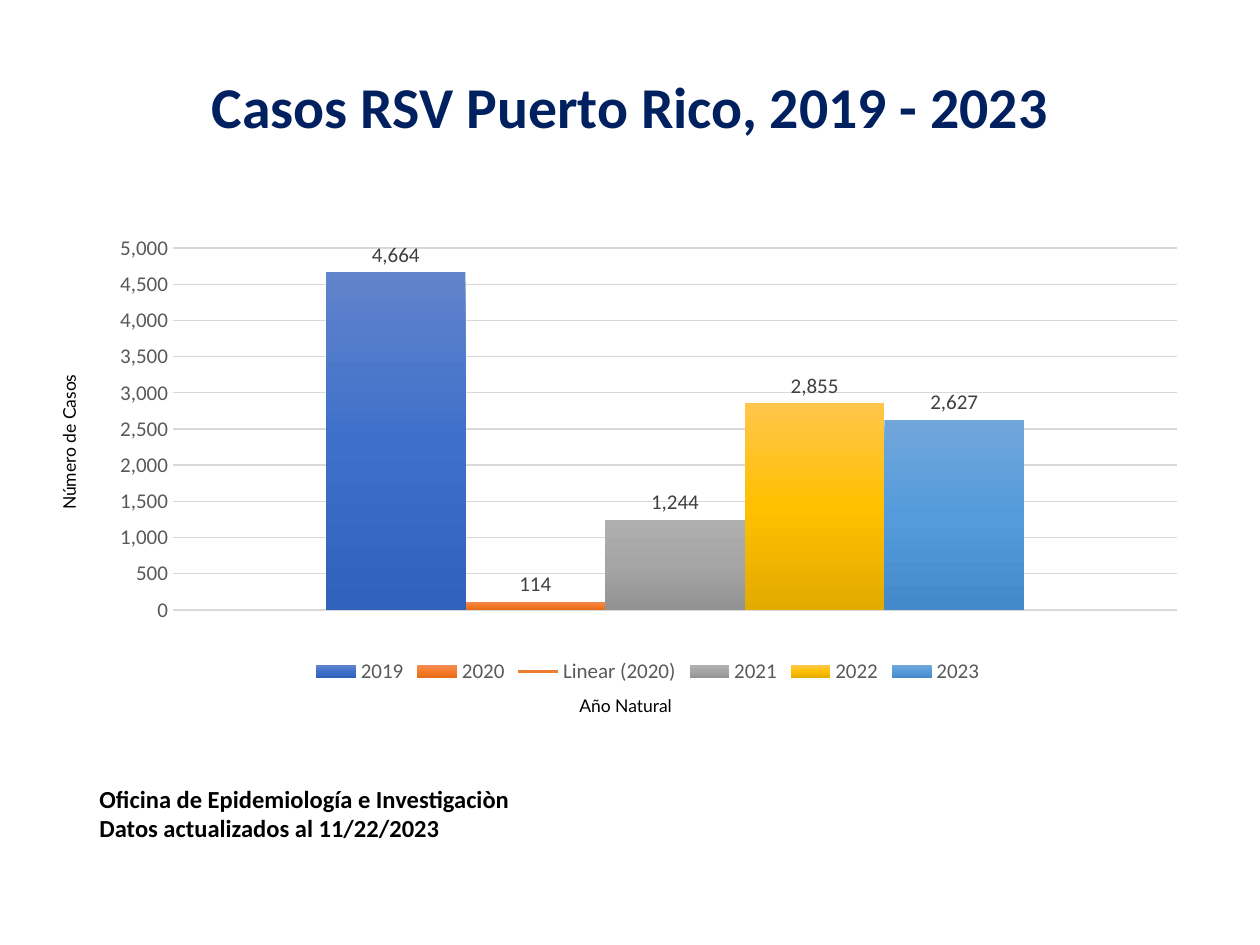
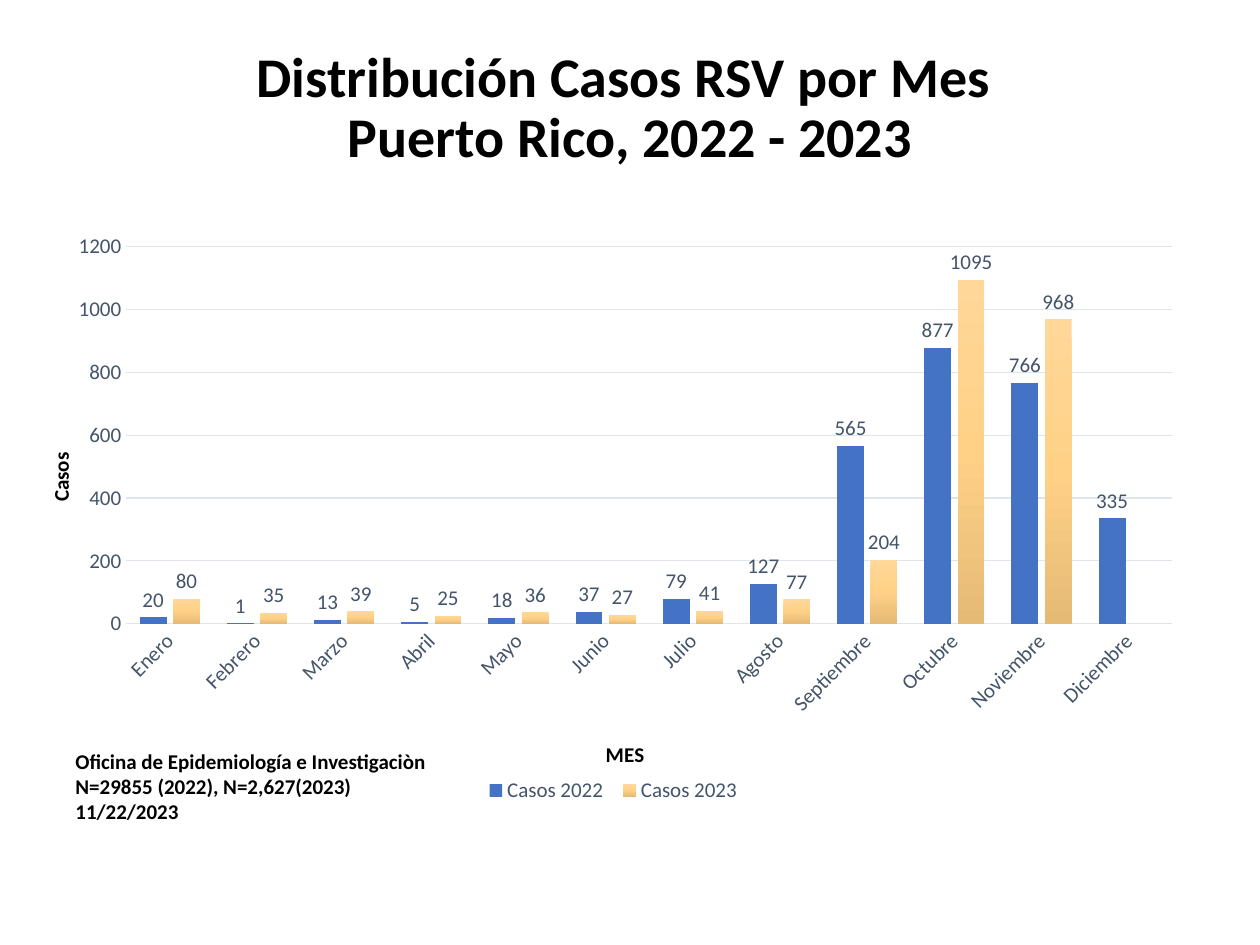
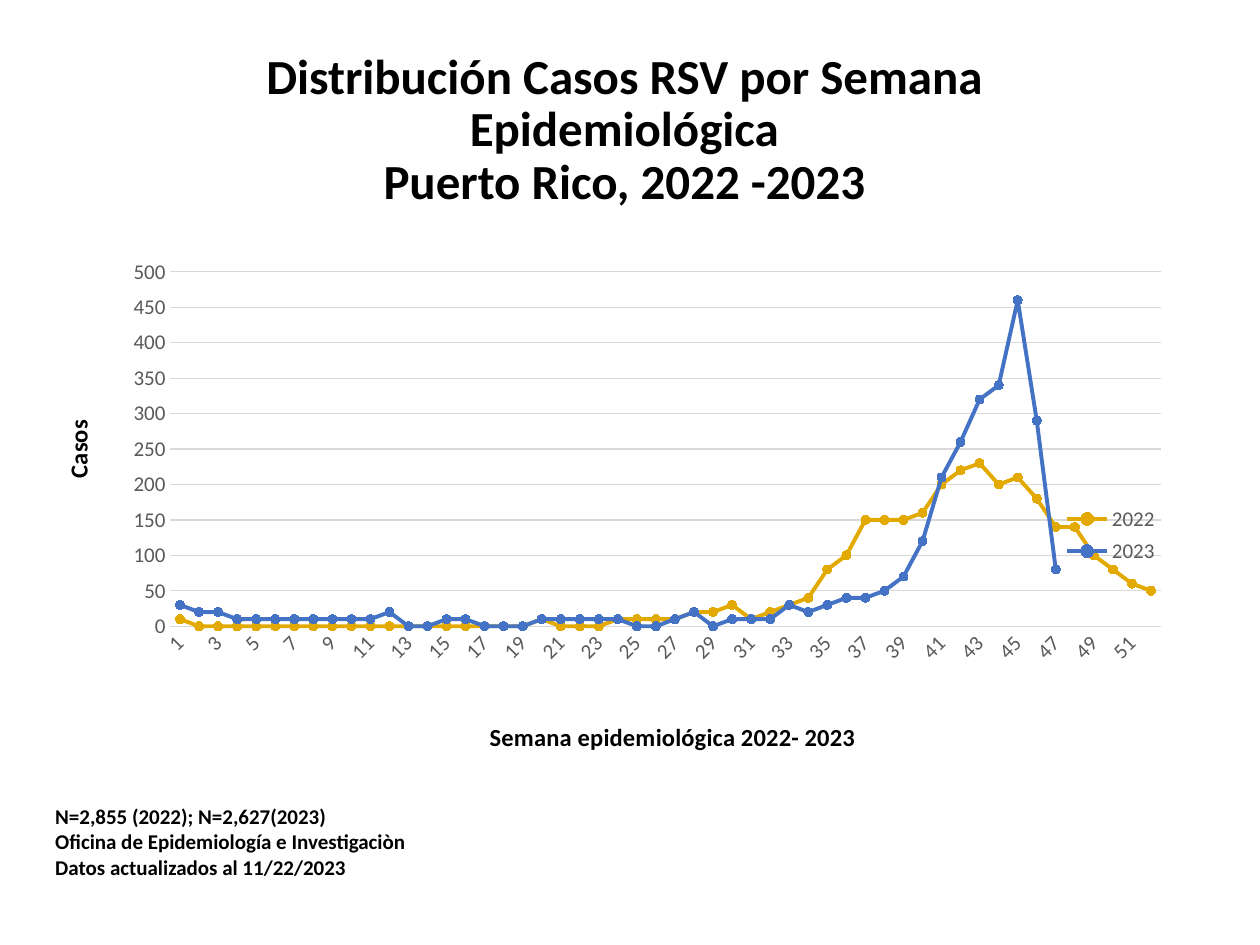
from dataclasses import dataclass

from pptx import Presentation
from pptx.chart.data import CategoryChartData
from pptx.dml.color import RGBColor
from pptx.enum.chart import (XL_CHART_TYPE, XL_LABEL_POSITION, XL_LEGEND_POSITION,
                             XL_MARKER_STYLE, XL_TICK_MARK)
from pptx.enum.text import MSO_ANCHOR, PP_ALIGN
from pptx.oxml import parse_xml
from pptx.oxml.ns import nsdecls, qn
from pptx.util import Inches, Pt

COLUMNS, LINES = XL_CHART_TYPE.COLUMN_CLUSTERED, XL_CHART_TYPE.LINE_MARKERS
BOTTOM, RIGHT = XL_LEGEND_POSITION.BOTTOM, XL_LEGEND_POSITION.RIGHT
OUTSIDE, CIRCLE, NO_TICK = XL_LABEL_POSITION.OUTSIDE_END, XL_MARKER_STYLE.CIRCLE, XL_TICK_MARK.NONE
CENTER, MIDDLE, TOP = PP_ALIGN.CENTER, MSO_ANCHOR.MIDDLE, MSO_ANCHOR.TOP


@dataclass(frozen=True)
class Theme:
    font: str = "Calibri"
    caption_font: str = "Lato"
    ink: str = "000000"
    navy: str = "002060"
    gray: str = "595959"
    label_gray: str = "404040"
    slate: str = "44546A"
    gray_grid: str = "D9D9D9"
    slate_grid: str = "E0E5EB"
    blue: str = "4472C4"
    orange: str = "ED7D31"
    gold: str = "E2AA00"
    gold_marker: str = "FFC000"
    caption: int = 10
    chart: int = 12
    source: int = 14


T = Theme()
OFFICE = "Oficina de Epidemiología e Investigaciòn"
UPDATED = "Datos actualizados al 11/22/2023"

# Content: cases per year (name, value, gradient)
YEARS = [
    ("2019", 4664, ("6183CB", "3E70CA", "3062BB")),
    ("2020", 114, ("F18C57", "F67B28", "E56C19")),
    ("2021", 1244, ("AFAFAF", "A5A5A5", "939393")),
    ("2022", 2855, ("FFC64B", "FFC000", "E3AB00")),
    ("2023", 2627, ("71A6DB", "559BDB", "448ACA")),
]

# Content: cases per month
MONTHS = ["Enero", "Febrero", "Marzo", "Abril", "Mayo", "Junio", "Julio", "Agosto",
          "Septiembre", "Octubre", "Noviembre", "Diciembre"]
MONTHLY = {
    "Casos 2022": [20, 1, 13, 5, 18, 37, 79, 127, 565, 877, 766, 335],
    "Casos 2023": [80, 35, 39, 25, 36, 27, 41, 77, 204, 1095, 968, None],
}
MONTHLY_FILLS = [T.blue, ("FFD798", "FFD187", "E5BA75")]

# Content: cases per epidemiological week
WEEKS = [str(week) for week in range(1, 53)]
WEEKLY = {
    "2022": [10, 0, 0, 0, 0, 0, 0, 0, 0, 0, 0, 0, 0, 0, 0, 0, 0, 0, 0, 10, 0, 0, 0, 10, 10, 10,
             10, 20, 20, 30, 10, 20, 30, 40, 80, 100, 150, 150, 150, 160, 200, 220, 230, 200,
             210, 180, 140, 140, 100, 80, 60, 50],
    "2023": [30, 20, 20, 10, 10, 10, 10, 10, 10, 10, 10, 20, 0, 0, 10, 10, 0, 0, 0, 10, 10, 10,
             10, 10, 0, 0, 10, 20, 0, 10, 10, 10, 30, 20, 30, 40, 40, 50, 70, 120, 210, 260, 320,
             340, 460, 290, 80] + [None] * 5,
}
WEEKLY_COLORS = [(T.gold, T.gold_marker), (T.blue, T.blue)]


def set_font(font, size, color, bold=False, name=T.font):
    font.size, font.bold, font.name = Pt(size), bold, name
    font.color.rgb = RGBColor.from_string(color)


def add_text(s, box, lines, size=T.chart, color=T.ink, bold=False, name=T.font,
             align=None, anchor=TOP, spacing=None, rotation=0):
    """Add a text box with one paragraph per line; a newline breaks inside one."""
    shape = s.shapes.add_textbox(*map(Inches, box))
    shape.rotation = rotation
    tf = shape.text_frame
    tf.word_wrap, tf.vertical_anchor = True, anchor
    for i, line in enumerate(lines):
        p = tf.add_paragraph() if i else tf.paragraphs[0]
        p.alignment, p.line_spacing = align, spacing
        for j, part in enumerate(line.split("\n")):
            if j:
                p.add_line_break()
            r = p.add_run()
            r.text = part
            set_font(r.font, size, color, bold, name)


def add_title(s, box, text, size, color=T.ink):
    add_text(s, box, [text], size=size, color=color, bold=True, align=CENTER,
             anchor=MIDDLE, spacing=0.9)


def set_layout(element, inner=False, **fractions):
    """Place a chart part by fractions of the chart's size."""
    for old in element.findall(qn("c:layout")):
        element.remove(old)
    target = '<c:layoutTarget val="inner"/>' if inner else ""
    modes = "".join(f'<c:{key}Mode val="edge"/>' for key in fractions if key in "xy")
    values = "".join(f'<c:{key} val="{v}"/>' for key, v in fractions.items())
    layout = parse_xml(f'<c:layout {nsdecls("c")}><c:manualLayout>{target}{modes}{values}'
                       '</c:manualLayout></c:layout>')
    overlay = element.find(qn("c:overlay"))
    if overlay is None:
        element.insert(0, layout)
    else:
        overlay.addprevious(layout)


def add_chart(s, kind, box, cats, series, plot, top, step, color, grid,
              legend=BOTTOM, legend_at=None, number_format="General"):
    """Add a chart with the axes, grid and legend that all slides share."""
    data = CategoryChartData(number_format=number_format)
    data.categories = cats
    for name, values in series.items():
        data.add_series(name, values)
    chart = s.shapes.add_chart(kind, *map(Inches, box), data).chart
    chart.has_title = False
    set_font(chart.font, T.caption, T.ink)
    chart.plots[0].vary_by_categories = False
    plot_area = chart._chartSpace.chart.plotArea
    set_layout(plot_area, inner=True, **dict(zip("xywh", plot)))

    # Axes and grid
    cat, val = chart.category_axis, chart.value_axis
    for axis in (cat, val):
        axis.major_tick_mark = axis.minor_tick_mark = NO_TICK
        set_font(axis.tick_labels.font, T.chart, color)
    val.minimum_scale, val.maximum_scale, val.major_unit = 0, top, step
    val.format.line.fill.background()
    val.has_major_gridlines = True
    for line in (cat.format.line, val.major_gridlines.format.line):
        line.width = Pt(0.75)
        line.color.rgb = RGBColor.from_string(grid)

    # Legend
    chart.has_legend = True
    chart.legend.position = legend
    chart.legend.include_in_layout = False
    set_font(chart.legend.font, T.chart, color)
    if legend_at:
        set_layout(chart.legend._element, **dict(zip("xywh", legend_at)))
    return chart


def title_axis(axis, text, size, x, y):
    axis.has_title = True
    tf = axis.axis_title.text_frame
    tf.text = text
    set_font(tf.paragraphs[0].runs[0].font, size, T.ink, bold=True)
    set_layout(axis.axis_title._element, x=x, y=y)


def slant_labels(axis):
    axis._element.find(qn("c:txPr")).find(qn("a:bodyPr")).set("rot", "-2700000")


def fill_columns(chart, fills, label_color, gap, overlap=0):
    """Fill each series with a plain colour or a gradient, and label its values."""
    plot = chart.plots[0]
    plot.gap_width, plot.overlap = gap, overlap
    for ser, fill in zip(plot.series, fills):
        if isinstance(fill, str):
            ser.format.fill.solid()
            ser.format.fill.fore_color.rgb = RGBColor.from_string(fill)
        else:
            stops = "".join(f'<a:gs pos="{i * 50000}"><a:srgbClr val="{c}"/></a:gs>'
                            for i, c in enumerate(fill))
            ser._element.get_or_add_spPr().insert(0, parse_xml(
                f'<a:gradFill {nsdecls("a")}><a:gsLst>{stops}</a:gsLst>'
                '<a:lin ang="5400000" scaled="0"/></a:gradFill>'))
        ser.invert_if_negative = False
        labels = ser.data_labels
        labels.show_value, labels.position = True, OUTSIDE
        set_font(labels.font, T.chart, label_color)


def add_trend(ser, color):
    ser._element.find(qn("c:dLbls")).addnext(parse_xml(
        f'<c:trendline {nsdecls("c", "a")}><c:spPr><a:ln w="19050"><a:solidFill>'
        f'<a:srgbClr val="{color}"/></a:solidFill></a:ln></c:spPr>'
        '<c:trendlineType val="linear"/><c:dispRSqr val="0"/><c:dispEq val="0"/></c:trendline>'))


def yearly_slide(s):
    add_title(s, (0.69, 0.4, 8.62, 0.94), "Casos RSV Puerto Rico, 2019 - 2023", 33, T.navy)
    chart = add_chart(s, COLUMNS, (0.79, 1.75, 8.7, 3.72), ["1"],
                      {name: [value] for name, value, _ in YEARS},
                      plot=(0.067, 0.059, 0.916, 0.772), top=5000, step=500,
                      color=T.gray, grid=T.gray_grid, number_format="#,##0")
    chart.category_axis.visible = False
    fill_columns(chart, [fill for _, _, fill in YEARS], T.label_gray, gap=219)
    add_trend(chart.plots[0].series[1], T.orange)

    # Axis captions and source
    caption = dict(size=T.caption, name=T.caption_font)
    add_text(s, (-0.89, 2.57, 2.88, 0.27), ["Número de Casos"], rotation=270, **caption)
    add_text(s, (4.5, 5.47, 2.88, 0.27), ["Año Natural"], **caption)
    add_text(s, (0.69, 6.17, 4.31, 0.57), [OFFICE, UPDATED], size=T.source, bold=True)


def monthly_slide(s):
    add_title(s, (0.69, 0.4, 8.62, 0.94),
              "Distribución Casos RSV por Mes \nPuerto Rico, 2022 - 2023", 32)
    chart = add_chart(s, COLUMNS, (0.25, 1.8, 9.06, 4.76), MONTHS, MONTHLY,
                      plot=(0.083, 0.033, 0.917, 0.629), top=1200, step=200,
                      color=T.slate, grid=T.slate_grid, legend_at=(0.39, 0.91, 0.24, 0.06))
    fill_columns(chart, MONTHLY_FILLS, T.slate, gap=100, overlap=-24)
    slant_labels(chart.category_axis)
    title_axis(chart.category_axis, "MES", 12, 0.5, 0.85)
    title_axis(chart.value_axis, "Casos", 12, 0.01, 0.37)
    add_text(s, (0.5, 5.89, 3.12, 0.71),
             [OFFICE, "N=29855 (2022), N=2,627(2023)", "11/22/2023"], bold=True)


def weekly_slide(s):
    add_title(s, (0.83, 0.25, 8.25, 1.58),
              "Distribución Casos RSV por Semana Epidemiológica\nPuerto Rico, 2022 -2023", 28)
    chart = add_chart(s, LINES, (0.36, 1.82, 8.95, 4.76), WEEKS, WEEKLY,
                      plot=(0.111, 0.071, 0.878, 0.591), top=500, step=50,
                      color=T.gray, grid=T.gray_grid, legend=RIGHT,
                      legend_at=(0.9, 0.45, 0.09, 0.12))
    for ser, (line, marker) in zip(chart.plots[0].series, WEEKLY_COLORS):
        ser.smooth = False
        ser.format.line.width = Pt(2.25)
        ser.format.line.color.rgb = RGBColor.from_string(line)
        ser.marker.style, ser.marker.size = CIRCLE, 5
        ser.marker.format.fill.solid()
        ser.marker.format.fill.fore_color.rgb = RGBColor.from_string(marker)
        ser.marker.format.line.color.rgb = RGBColor.from_string(marker)
    slant_labels(chart.category_axis)
    title_axis(chart.category_axis, "Semana epidemiológica 2022- 2023", 14, 0.39, 0.81)
    title_axis(chart.value_axis, "Casos", 14, 0.01, 0.31)
    add_text(s, (0.34, 6.33, 3.2, 0.71),
             ["N=2,855 (2022); N=2,627(2023)", OFFICE, UPDATED], bold=True)


def main():
    prs = Presentation()
    prs.slide_width, prs.slide_height = Inches(10), Inches(7.5)
    for build in (yearly_slide, monthly_slide, weekly_slide):
        build(prs.slides.add_slide(prs.slide_layouts[6]))
    prs.save("out.pptx")


if __name__ == "__main__":
    main()
